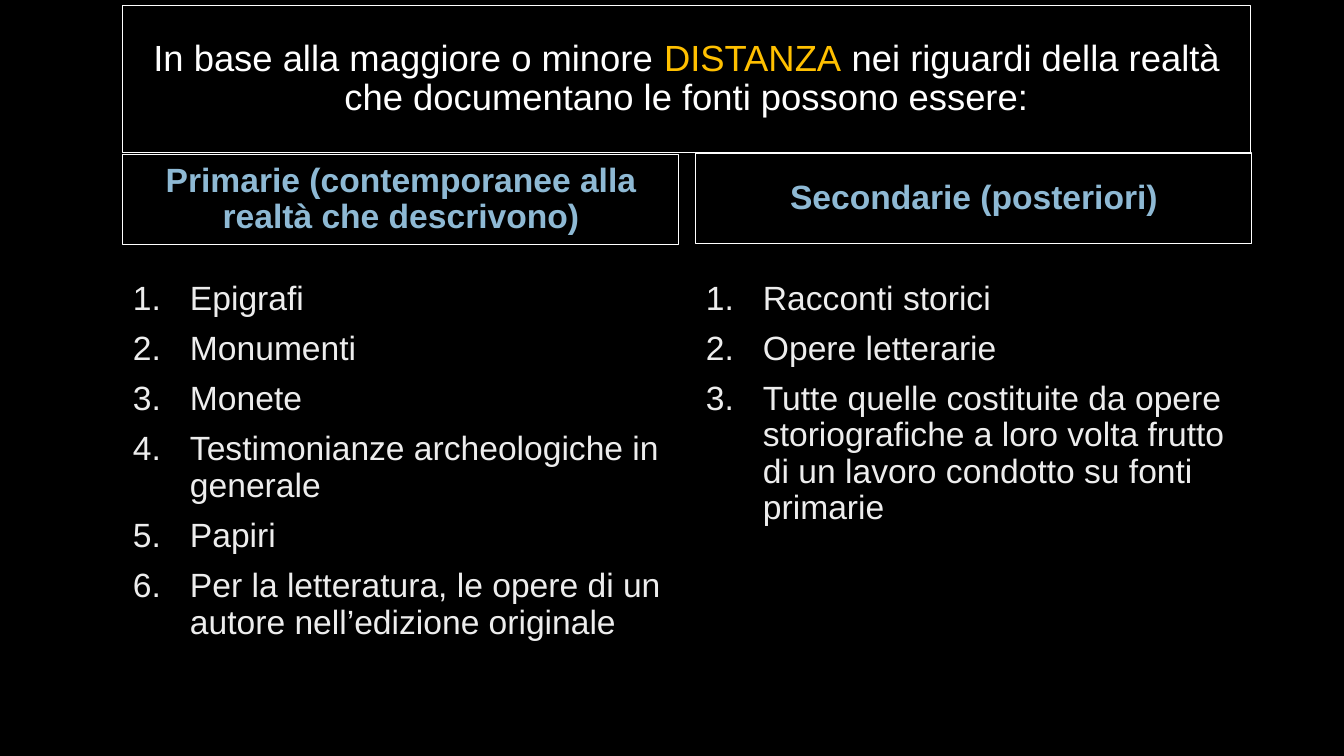
import pptx
import pptx.util
import pptx.dml.color
import pptx.enum.shapes
import pptx.enum.text
import pptx.oxml

SCALE = 914400 / 100.8
THEME = {
    "font": "Arial",
    "back": "000000",
    "line": "FFFFFF",
    "title": "FFFFFF",
    "accent": "FFC000",
    "head": "8EB9D4",
    "body": "EDEDED",
    "big": 26,
    "mid": 24,
}


def px(num):
    """Turn whole pixels into EMU."""
    return pptx.util.Emu(round(num * SCALE))


def write(shape, paras, size, bold=False, center=False, count=False, inset=10):
    """Fill a shape with paragraphs, each a list of (text, colour) runs."""
    frame = shape.text_frame
    frame.word_wrap = True
    frame.margin_left = frame.margin_right = px(inset)
    frame.margin_top = frame.margin_bottom = px(5)
    anchor = pptx.enum.text.MSO_ANCHOR
    frame.vertical_anchor = anchor.MIDDLE if center else anchor.TOP
    align = pptx.enum.text.PP_ALIGN
    for pos, runs in enumerate(paras):
        para = frame.add_paragraph() if pos else frame.paragraphs[0]
        if count:
            props = para._p.get_or_add_pPr()
            props.set("marL", str(px(57)))
            props.set("indent", str(-px(57)))
            props.append(pptx.oxml.parse_xml(
                '<a:buFont xmlns:a="http://schemas.openxmlformats.org/drawingml/2006/main"'
                f' typeface="{THEME["font"]}"/>'))
            props.append(pptx.oxml.parse_xml(
                '<a:buAutoNum xmlns:a="http://schemas.openxmlformats.org/drawingml/2006/main"'
                ' type="arabicPeriod"/>'))
        para.alignment = align.CENTER if center else align.LEFT
        para.line_spacing = 0.9
        if pos:
            para.space_before = pptx.util.Pt(10)
        for text, color in runs:
            run = para.add_run()
            run.text = text
            run.font.name = THEME["font"]
            run.font.size = pptx.util.Pt(size)
            run.font.bold = bold
            run.font.color.rgb = pptx.dml.color.RGBColor.from_string(THEME[color])


deck = pptx.Presentation()
deck.slide_width, deck.slide_height = px(1344), px(756)
slide = deck.slides.add_slide(deck.slide_layouts[6])
slide.background.fill.solid()
slide.background.fill.fore_color.rgb = pptx.dml.color.RGBColor.from_string(THEME["back"])

title = [
    ("In base alla maggiore o minore ", "title"),
    ("DISTANZA", "accent"),
    (" nei riguardi della realtà che documentano le fonti possono essere:", "title"),
]
heads = [
    (123, 154, 20, "Primarie (contemporanee alla realtà che descrivono)"),
    (696, 153, 10, "Secondarie (posteriori)"),
]
lists = [
    ["Epigrafi", "Monumenti", "Monete", "Testimonianze archeologiche in generale",
     "Papiri", "Per la letteratura, le opere di un autore nell’edizione originale"],
    ["Racconti storici", "Opere letterarie",
     "Tutte quelle costituite da opere storiografiche a loro volta frutto "
     "di un lavoro condotto su fonti primarie"],
]

# Framed boxes: the title and the two column heads
frames = [(123, 6, 1128, 147, 10, title, THEME["big"], False)]
for left, top, inset, text in heads:
    frames.append((left, top, 556, 91, inset, [(text, "head")], THEME["mid"], True))
for left, top, width, height, inset, runs, size, bold in frames:
    box = slide.shapes.add_shape(pptx.enum.shapes.MSO_SHAPE.RECTANGLE,
                                 px(left), px(top), px(width), px(height))
    box.shadow.inherit = False
    box.fill.background()
    box.line.color.rgb = pptx.dml.color.RGBColor.from_string(THEME["line"])
    box.line.width = pptx.util.Pt(0.75)
    write(box, [runs], size, bold=bold, center=True, inset=inset)

# Numbered lists under the heads
for (left, *_), items in zip(heads, lists):
    box = slide.shapes.add_textbox(px(left), px(276), px(555), px(406))
    write(box, [[(item, "body")] for item in items], THEME["mid"], count=True)

deck.save("out.pptx")
